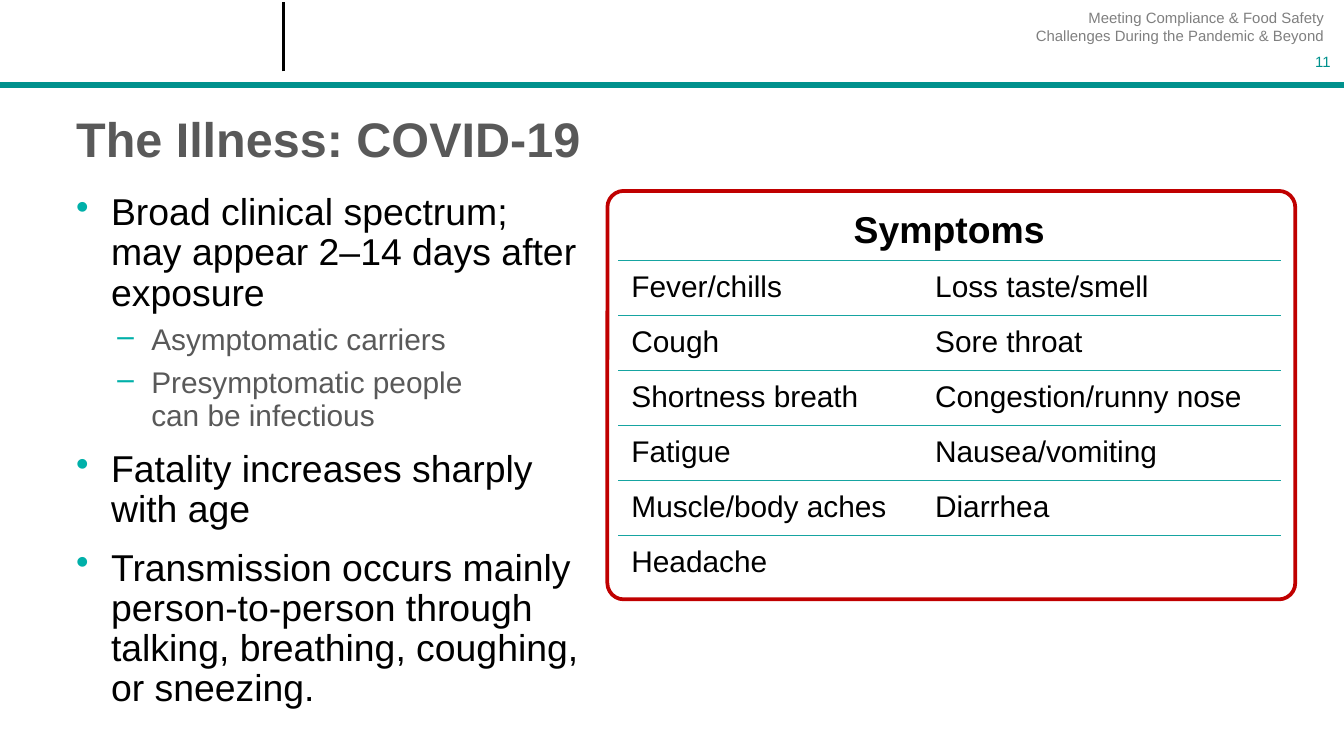
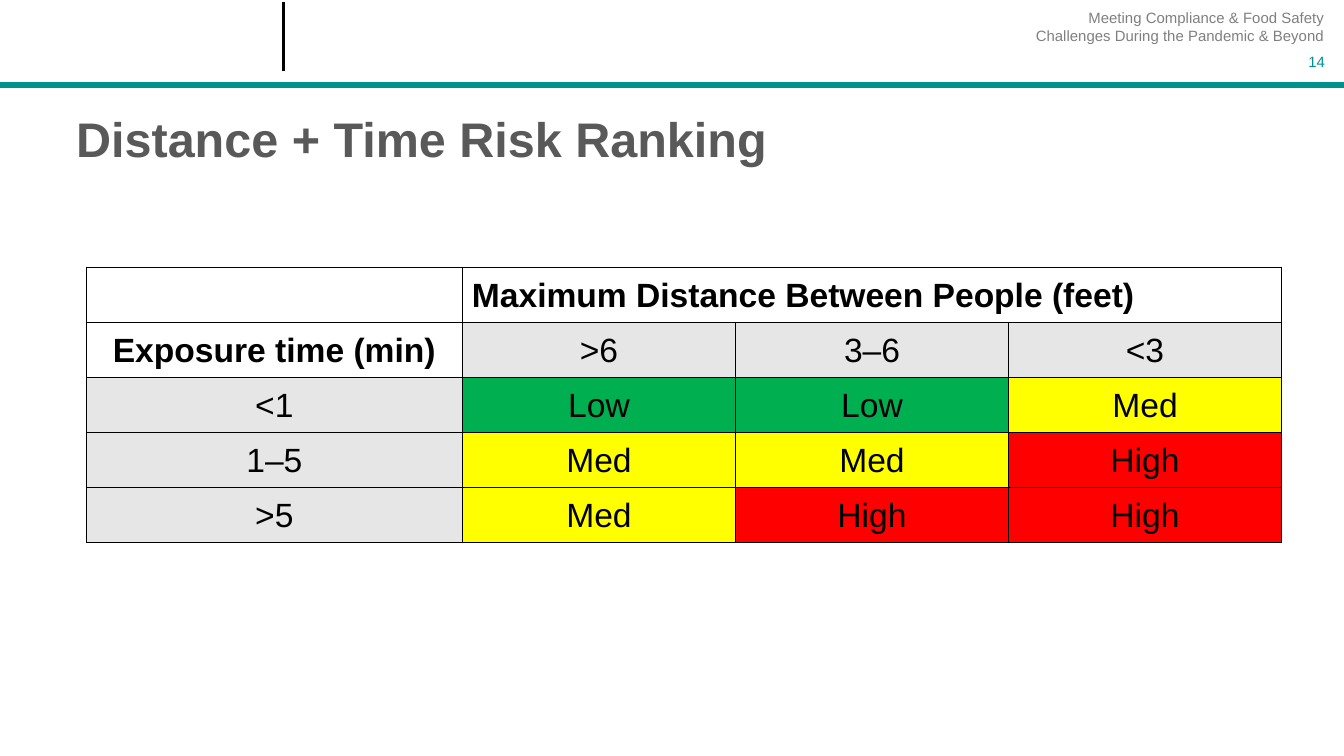
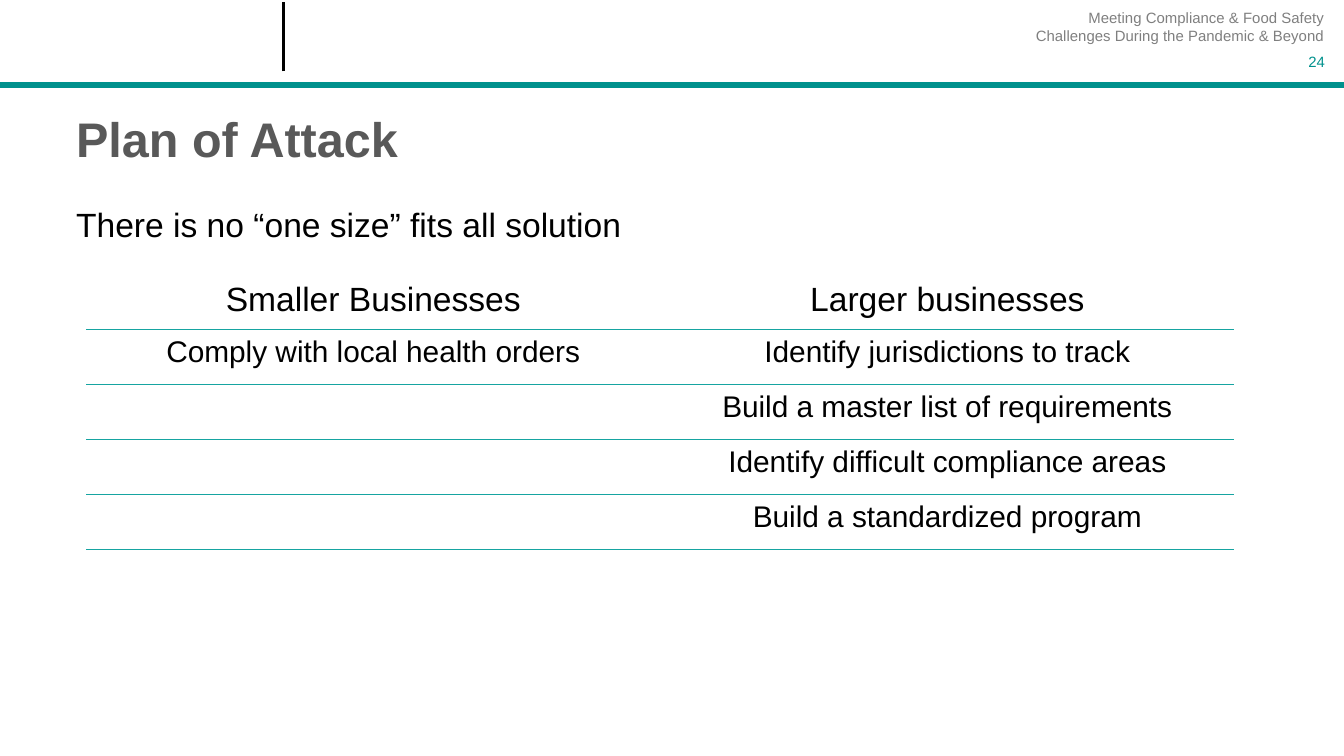
"""Builds three slides on illness, risk ranking and planning."""
from copy import deepcopy
from dataclasses import dataclass

from lxml import etree
from pptx import Presentation
from pptx.dml.color import RGBColor
from pptx.enum import shapes, text
from pptx.oxml.ns import qn
from pptx.util import Cm, Pt

CENTER, RIGHT = text.PP_ALIGN.CENTER, text.PP_ALIGN.RIGHT
MIDDLE, TOP = text.MSO_ANCHOR.MIDDLE, text.MSO_ANCHOR.TOP
PLAIN = "{2D5ABB26-0587-4C30-8999-92F81FD0307C}"


@dataclass(frozen=True)
class Theme:
    font: str = "Arial"
    black: str = "000000"
    white: str = "FFFFFF"
    gray: str = "595959"
    pale: str = "7F7F7F"
    shade: str = "E7E6E6"
    teal: str = "00918D"
    mark: str = "00B0A9"
    rule: str = "16A4A1"
    frame: str = "C00000"
    low: str = "00B050"
    med: str = "FFFF00"
    high: str = "FF0000"
    title: int = 26
    large: int = 20
    mid: int = 18
    base: int = 16
    small: int = 8


T = Theme()
HEADER = "Meeting Compliance & Food Safety Challenges During the Pandemic & Beyond"


def add(parent, tag, **attrs):
    node = etree.SubElement(parent, qn(tag))
    for name, value in attrs.items():
        node.set(name, str(value))
    return node


def write(par, words, size=T.base, color=T.black, bold=False, align=None,
          lead=None, before=None, after=None, bullet=None, left=0, hang=0):
    if bullet:
        props = par._p.get_or_add_pPr()
        props.set("marL", str(Cm(left)))
        props.set("indent", str(-Cm(hang)))
        add(add(props, "a:buClr"), "a:srgbClr", val=T.mark)
        add(props, "a:buChar", char=bullet)
    par.text = words
    par.alignment = align
    par.line_spacing = lead
    if before is not None:
        par.space_before = Pt(before)
    if after is not None:
        par.space_after = Pt(after)
    for run in par.runs:
        run.font.name = T.font
        run.font.size = Pt(size)
        run.font.bold = bold
        run.font.color.rgb = RGBColor.from_string(color)
    for gap in par._p.findall(qn("a:br")):
        gap.append(deepcopy(par.runs[0]._r.rPr))


class Deck:
    def __init__(self):
        self.file = Presentation()
        self.file.slide_width, self.file.slide_height = Cm(25.4), Cm(14.29)
        self.slide = None

    def page(self, title, number, left=19.02):
        self.slide = self.file.slides.add_slide(self.file.slide_layouts[6])
        self.line(0, 1.61, 25.4, 1.61, T.teal, 3)
        self.line(5.36, 1.35, 5.36, 0.03, T.black, 2)
        self.text(1.19, 1.85, 23.01, 1.68, [(title, dict(
            size=T.title, color=T.gray, bold=True, lead=0.9))], MIDDLE)
        self.text(19.13, 0.13, 6.15, 0.76, [(HEADER, dict(
            size=T.small, color=T.pale, align=RIGHT))], MIDDLE)
        self.text(left, 0.94, 6.27, 0.46, [(str(number), dict(
            size=T.small, color=T.teal, align=RIGHT))], MIDDLE)

    def line(self, x1, y1, x2, y2, color, width):
        line = self.slide.shapes.add_connector(
            shapes.MSO_CONNECTOR.STRAIGHT, Cm(x1), Cm(y1), Cm(x2), Cm(y2))
        line.line.color.rgb = RGBColor.from_string(color)
        line.line.width = Pt(width)
        add(line._element.spPr, "a:effectLst")

    def text(self, x, y, w, h, items, anchor=TOP):
        frame = self.slide.shapes.add_textbox(Cm(x), Cm(y), Cm(w), Cm(h)).text_frame
        frame.word_wrap = True
        frame.vertical_anchor = anchor
        for i, (words, style) in enumerate(items):
            par = frame.add_paragraph() if i else frame.paragraphs[0]
            write(par, words, **(style if i else {**style, "before": None}))

    def frame(self, x, y, w, h, color):
        box = self.slide.shapes.add_shape(
            shapes.MSO_SHAPE.ROUNDED_RECTANGLE, Cm(x), Cm(y), Cm(w), Cm(h))
        box.adjustments[0] = 0.04
        box.shadow.inherit = False
        box.fill.background()
        box.line.color.rgb = RGBColor.from_string(color)
        box.line.width = Pt(2)

    def table(self, x, y, cols, rows, style, edges, fill=None, span=None,
              anchor=MIDDLE, tight=False, height=1.04):
        """Draws rows; style, edges and fill are rules that take (row, column)."""
        table = self.slide.shapes.add_table(
            len(rows), len(cols), Cm(x), Cm(y), Cm(sum(cols)), Cm(height * len(rows))).table
        table._tbl.tblPr.find(qn("a:tableStyleId")).text = PLAIN
        table.first_row = table.horz_banding = False
        for col, width in zip(table.columns, cols):
            col.width = Cm(width)
        for r, row in enumerate(rows):
            table.rows[r].height = Cm(height)
            for c, words in enumerate(row):
                cell = table.cell(r, c)
                cell.vertical_anchor = anchor
                if tight:
                    cell.margin_left = cell.margin_right = Cm(0.18)
                    cell.margin_top = cell.margin_bottom = 0
                for side, color in edges(r, c).items():
                    edge = add(cell._tc.get_or_add_tcPr(), f"a:ln{side}", w=Pt(0.25))
                    add(add(edge, "a:solidFill"), "a:srgbClr", val=color)
                color = fill(r, c) if fill else None
                if color:
                    cell.fill.solid()
                    cell.fill.fore_color.rgb = RGBColor.from_string(color)
                else:
                    cell.fill.background()
                if words:
                    write(cell.text_frame.paragraphs[0], words, **style(r, c))
        if span:
            table.cell(0, span[0]).merge(table.cell(0, span[1]))


def illness(deck):
    deck.page("The Illness: COVID-19", 11, left=19.13)
    main = dict(size=T.large, lead=0.9, before=7.5, after=2,
                bullet="•", left=0.66, hang=0.66)
    sub = dict(size=T.base, color=T.gray, lead=0.9, before=3.8, after=2,
               bullet="–", left=1.42, hang=0.64)
    deck.text(1.19, 3.53, 10.01, 9.07, [
        ("Broad clinical spectrum; may appear 2–14 days after exposure", main),
        ("Asymptomatic carriers", sub),
        ("Presymptomatic people \ncan be infectious", sub),
        ("Fatality increases sharply with age", main),
        ("Transmission occurs mainly person-to-person through talking, "
         "breathing, coughing, or sneezing.", main)])
    rows = [
        ("Symptoms", ""),
        ("Fever/chills", "Loss taste/smell"),
        ("Cough", "Sore throat"),
        ("Shortness breath", "Congestion/runny nose"),
        ("Fatigue", "Nausea/vomiting"),
        ("Muscle/body aches", "Diarrhea"),
        ("Headache", "")]
    head = dict(size=T.large, bold=True, align=CENTER)
    deck.table(11.68, 3.81, (5.74, 6.78), rows,
               style=lambda r, c: {} if r else head,
               edges=lambda r, c: {"B": T.rule} if r < len(rows) - 1 else {},
               fill=lambda r, c: T.white, span=(0, 1))
    deck.frame(11.48, 3.61, 13, 7.72, T.frame)


def ranking(deck):
    deck.page("Distance + Time Risk Ranking", 14)
    rows = [
        ("", "Maximum Distance Between People (feet)", "", ""),
        ("Exposure time (min)", ">6", "3–6", "<3"),
        ("<1", "Low", "Low", "Med"),
        ("1–5", "Med", "Med", "High"),
        (">5", "Med", "High", "High")]
    risks = {"Low": T.low, "Med": T.med, "High": T.high}

    def style(r, c):
        return dict(size=T.mid, lead=1.07, bold=r == 0 or (r, c) == (1, 0),
                    align=CENTER if r else None)

    def fill(r, c):
        if r == 0 or (r, c) == (1, 0):
            return None
        return risks.get(rows[r][c], T.shade)

    deck.table(1.63, 5.05, (7.11, 5.16, 5.16, 5.16), rows, style,
               edges=lambda r, c: dict.fromkeys("LRTB", T.black),
               fill=fill, span=(1, 3), tight=True)


def plan(deck):
    deck.page("Plan of Attack", 24)
    deck.text(1.19, 3.81, 23.01, 9.07, [
        ("There is no “one size” fits all solution", dict(size=T.mid, lead=0.9))])
    rows = [
        ("Smaller Businesses", "Larger businesses"),
        ("Comply with local health orders", "Identify jurisdictions to track"),
        ("", "Build a master list of requirements"),
        ("", "Identify difficult compliance areas"),
        ("", "Build a standardized program")]
    deck.table(1.63, 5.18, (10.85, 10.85), rows,
               style=lambda r, c: dict(size=T.base if r else T.mid, align=CENTER),
               edges=lambda r, c: {"B": T.rule}, anchor=TOP)


def main():
    deck = Deck()
    for build in (illness, ranking, plan):
        build(deck)
    deck.file.save("out.pptx")


if __name__ == "__main__":
    main()
